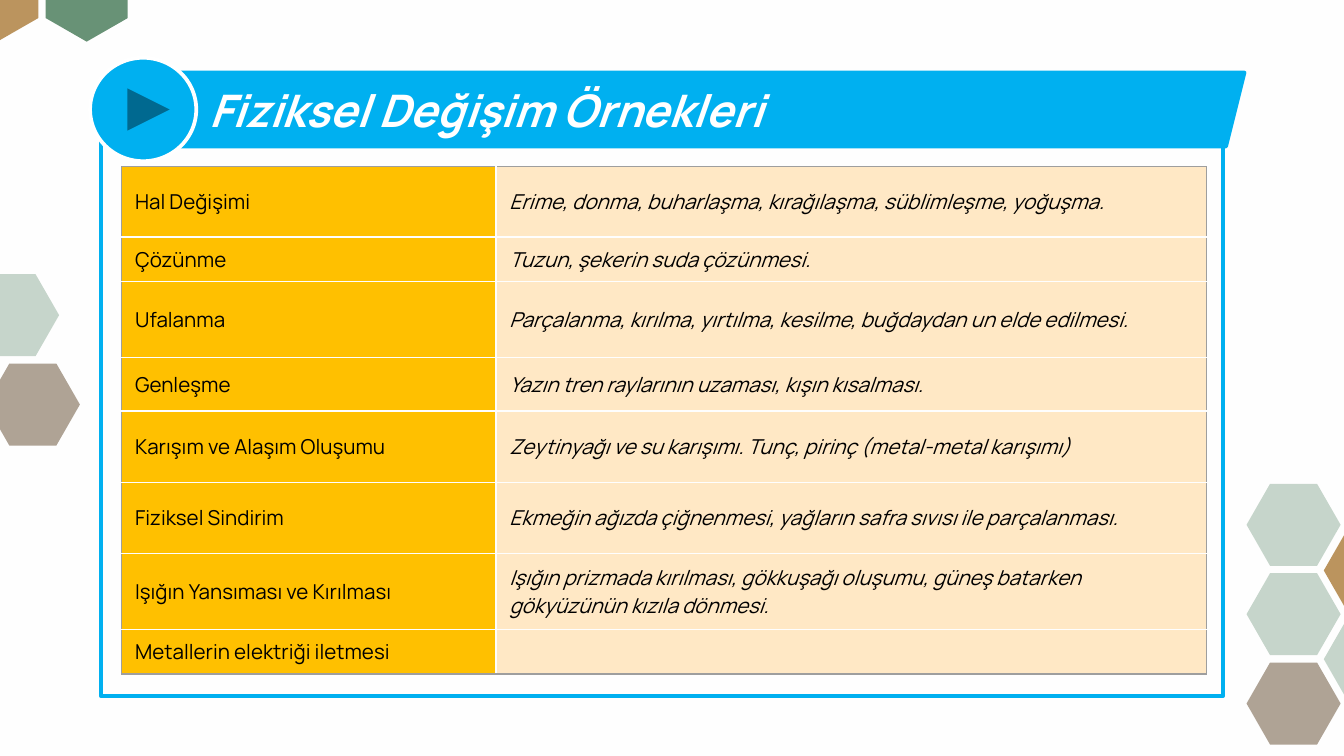
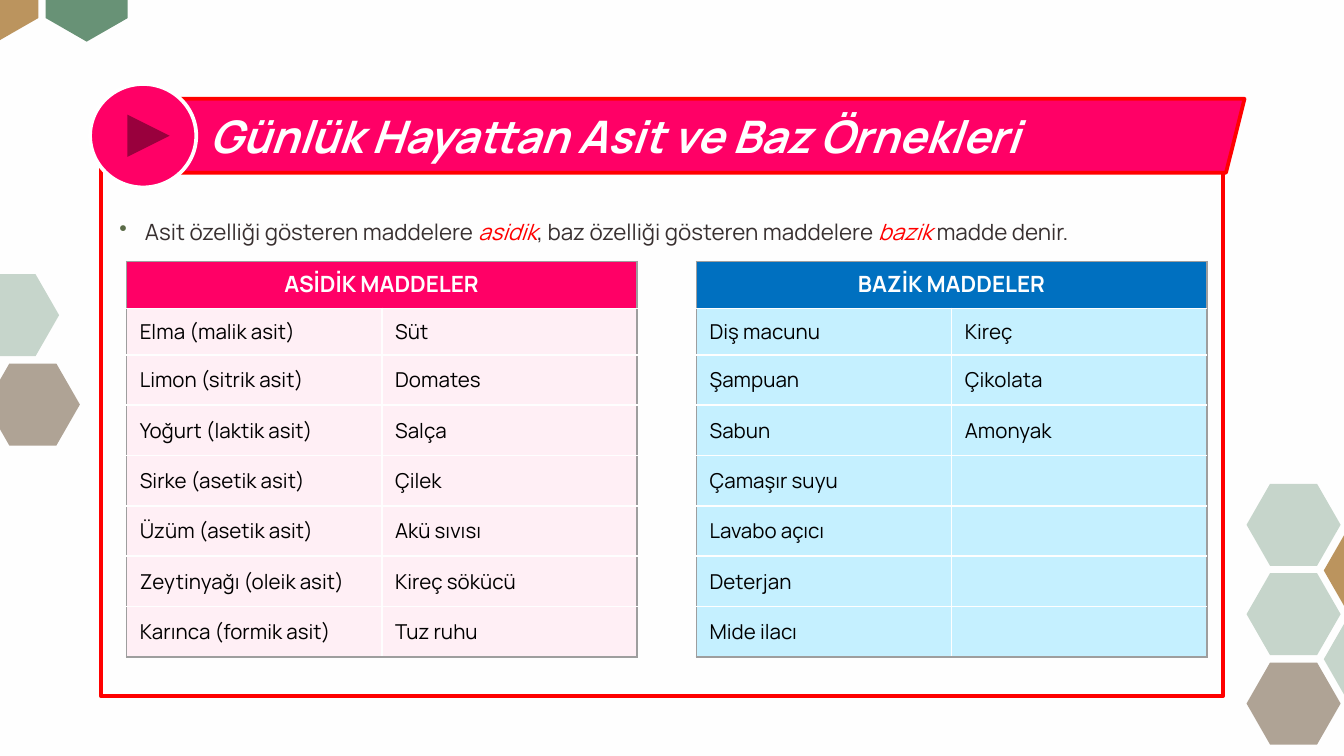
from lxml.etree import SubElement
from pptx import Presentation
from pptx.dml.color import RGBColor
from pptx.enum.shapes import MSO_SHAPE as Shape
from pptx.enum.text import MSO_ANCHOR as Anchor, PP_ALIGN as Align
from pptx.oxml.ns import qn
from pptx.util import Pt

# Shared style: 200 px to the inch
SCALE = 4572
FONT = "Manrope"
PAPER, WHITE, BLACK, GREY = "FEFEFE", "FFFFFF", "000000", "9E9E9E"
RED, PINK, BLUE = "FF0000", "FF0066", "00B0F0"
INK, MOSS = "383030", "5A6B47"
GREEN, BROWN, GOLD = "004717", "6D563C", "BB945E"

# Hexagons: centre x, centre y, colour, opacity in percent, pointed top
HEXAGONS = [
    (2040, 981, GREEN, 22, False),
    (1925, 781, GREEN, 22, False),
    (1925, 914, GREEN, 22, False),
    (2040, 849, GOLD, 100, False),
    (1925, 1047, BROWN, 54, False),
    (18, 469, GREEN, 22, False),
    (49, 602, BROWN, 54, False),
    (-4, -8, GOLD, 100, True),
    (129, -8, GREEN, 59, True),
]
HEXAGON_CORNERS = [(-35, -61), (-70, 0), (-35, 61), (35, 61), (70, 0), (35, -61)]


def px(*lengths):
    return [length * SCALE for length in lengths]


def paint(fill, color, opacity=100):
    fill.solid()
    fill.fore_color.rgb = RGBColor.from_string(color)
    if opacity < 100:
        tint = fill._xPr.find(".//" + qn("a:srgbClr"))
        SubElement(tint, qn("a:alpha"), val=str(opacity * 1000))


class Deck:
    def __init__(self):
        self.deck = Presentation()
        self.deck.slide_width, self.deck.slide_height = px(2000, 1125)
        self.page = None

    def new_page(self):
        self.page = self.deck.slides.add_slide(self.deck.slide_layouts[6])
        paint(self.page.background.fill, PAPER)
        for hexagon in HEXAGONS:
            self.hexagon(*hexagon)

    def finish(self, shape, color, line=None, opacity=100):
        shape.shadow.inherit = False
        paint(shape.fill, color, opacity)
        if line:
            paint(shape.line.fill, line)
            shape.line.width = Pt(2)
        else:
            shape.line.fill.background()

    def hexagon(self, x, y, color, opacity, pointed):
        corners = [(x + b, y + a) if pointed else (x + a, y + b)
                   for a, b in HEXAGON_CORNERS]
        outline = self.page.shapes.build_freeform(*corners[0], scale=SCALE)
        outline.add_line_segments(corners[1:], close=True)
        self.finish(outline.convert_to_shape(), color, opacity=opacity)

    def shape(self, kind, place, color, line=None):
        self.finish(self.page.shapes.add_shape(kind, *px(*place)), color, line)

    def span(self, para, text, size, color, bold=False, italic=False):
        span = para.add_run()
        span.text = text
        font = span.font
        font.name, font.size, font.bold, font.italic = FONT, Pt(size), bold, italic
        paint(font.fill, color)

    def text(self, place):
        box = self.page.shapes.add_textbox(*px(*place))
        frame = box.text_frame
        frame.word_wrap = True
        frame.margin_left, frame.margin_top, frame.margin_right, frame.margin_bottom = px(20, 20, 20, 20)
        return frame.paragraphs[0]

    def bullet(self, place, spans):
        para = self.text(place)
        para.line_spacing = 1.15
        props = para._p.get_or_add_pPr()
        indent, = px(38)
        props.set("marL", str(indent))
        props.set("indent", str(-indent))
        SubElement(SubElement(props, qn("a:buClr")), qn("a:srgbClr"), val=MOSS)
        SubElement(props, qn("a:buChar"), char="•")
        for text, color in spans:
            self.span(para, text, 12, color, italic=color == RED)

    def panel(self, title, top, color, line):
        """White frame with a slanted title band and a round button."""
        self.shape(Shape.RECTANGLE, (150, 202, 1670, 834), PAPER, line)
        self.shape(Shape.PARALLELOGRAM, (182, top, 1670, 110), color, line)
        self.span(self.text((292, top - 5, 1552, 126)), title, 24, WHITE, True, True)
        self.shape(Shape.OVAL, (134, top - 22, 158, 154), WHITE if color is None else color, WHITE)
        self.shape(Shape.ACTION_BUTTON_FORWARD_OR_NEXT, (174, top + 13, 94, 84), color)

    def borders(self, cell, outer):
        props = cell._tc.get_or_add_tcPr()
        for side in "LRTB":
            color, width = (GREY, 0.75) if side in outer else (PAPER, 1)
            edge = SubElement(props, qn("a:ln" + side), w=str(Pt(width)))
            SubElement(SubElement(edge, qn("a:solidFill")), qn("a:srgbClr"), val=color)

    def table(self, left, top, widths, heights, rows, fills, header=None, italic_column=None):
        """Grid with a grey rim; header is a fill for a merged first row."""
        place = px(left, top, sum(widths), sum(heights))
        table = self.page.shapes.add_table(len(rows), len(widths), *place).table
        table.first_row = table.horz_banding = False
        for column, width in zip(table.columns, widths):
            column.width, = px(width)
        for row, height in zip(table.rows, heights):
            row.height, = px(height)
        if header:
            table.cell(0, 0).merge(table.cell(0, len(widths) - 1))
        for r, texts in enumerate(rows):
            for c, text in enumerate(texts):
                cell = table.cell(r, c)
                heading = header and r == 0
                outer = "L" * (c == 0) + "T" * (r == 0) + "B" * (r == len(rows) - 1)
                outer += "R" * bool(heading or c == len(widths) - 1)
                self.borders(cell, outer)
                paint(cell.fill, header if heading else fills[c])
                para = cell.text_frame.paragraphs[0]
                if heading:
                    para.alignment = Align.CENTER
                else:
                    cell.vertical_anchor = Anchor.MIDDLE
                if not text:
                    SubElement(para._p, qn("a:endParaRPr"), sz="1100")
                elif heading:
                    self.span(para, text, 12, PAPER, bold=True)
                else:
                    self.span(para, text, 11, BLACK, italic=c == italic_column)


# Slide 1: physical changes
CHANGES = [
    ("Hal Değişimi", "Erime, donma, buharlaşma, kırağılaşma, süblimleşme, yoğuşma."),
    ("Çözünme", "Tuzun, şekerin suda çözünmesi."),
    ("Ufalanma", "Parçalanma, kırılma, yırtılma, kesilme, buğdaydan un elde edilmesi."),
    ("Genleşme", "Yazın tren raylarının uzaması, kışın kısalması."),
    ("Karışım ve Alaşım Oluşumu", "Zeytinyağı ve su karışımı. Tunç, pirinç (metal-metal karışımı)"),
    ("Fiziksel Sindirim", "Ekmeğin ağızda çiğnenmesi, yağların safra sıvısı ile parçalanması."),
    ("Işığın Yansıması ve Kırılması",
     "Işığın prizmada kırılması, gökkuşağı oluşumu, güneş batarken gökyüzünün kızıla dönmesi."),
    ("Metallerin elektriği iletmesi", ""),
]

# Slide 2: acids and bases
ACIDS = [
    ("ASİDİK MADDELER", ""),
    ("Elma (malik asit)", "Süt"),
    ("Limon (sitrik asit)", "Domates"),
    ("Yoğurt (laktik asit)", "Salça"),
    ("Sirke (asetik asit)", "Çilek"),
    ("Üzüm (asetik asit)", "Akü sıvısı"),
    ("Zeytinyağı (oleik asit)", "Kireç sökücü"),
    ("Karınca (formik asit)", "Tuz ruhu"),
]
BASES = [
    ("BAZİK MADDELER", ""),
    ("Diş macunu", "Kireç"),
    ("Şampuan", "Çikolata"),
    ("Sabun", "Amonyak"),
    ("Çamaşır suyu", ""),
    ("Lavabo açıcı", ""),
    ("Deterjan", ""),
    ("Mide ilacı", ""),
]
DEFINITION = [
    ("Asit özelliği gösteren maddelere ", INK),
    ("asidik", RED),
    (", baz özelliği gösteren maddelere ", INK),
    ("bazik", RED),
    (" madde denir.", INK),
]


def main():
    show = Deck()

    show.new_page()
    show.panel("Fiziksel Değişim Örnekleri", 108, BLUE, BLUE)
    show.table(181, 248, [557, 1058], [105, 66, 113, 80, 106, 106, 113, 66],
               CHANGES, ["FFC000", "FFE8C5"], italic_column=1)

    show.new_page()
    show.panel("Günlük Hayattan Asit ve Baz Örnekleri", 147, PINK, RED)
    show.bullet((158, 298, 1618, 720), DEFINITION)
    for left, rows, header, fill in [(188, ACIDS, PINK, "FFEFF5"),
                                     (1036, BASES, "0070C0", "C5F0FF")]:
        show.table(left, 389, [380, 380], [70, 69] + [75] * 6, rows, [fill, fill], header)

    show.deck.save("out.pptx")


if __name__ == "__main__":
    main()
